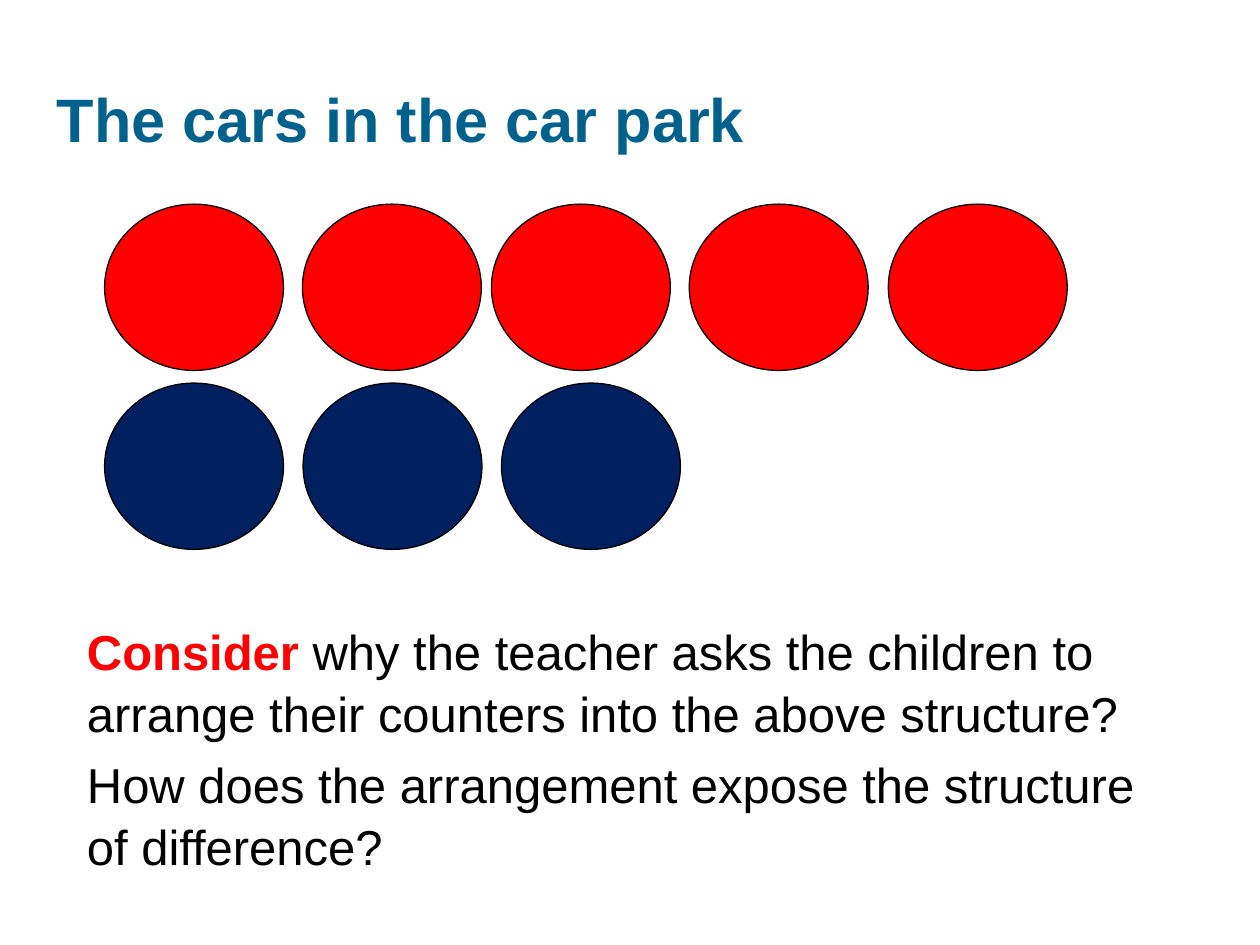
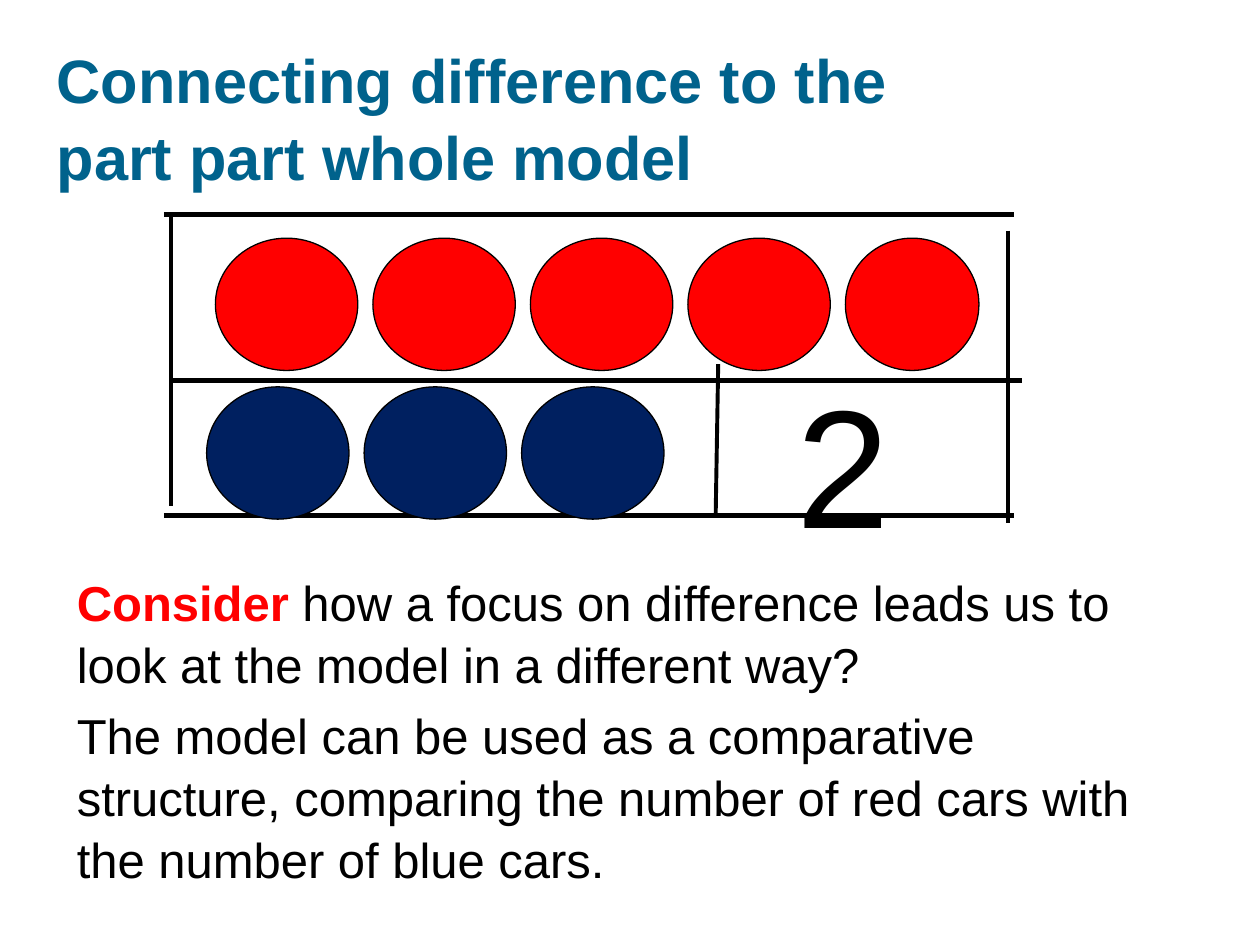
from lxml import etree
from pptx import Presentation
from pptx.dml.color import RGBColor
from pptx.enum.shapes import MSO_CONNECTOR, MSO_SHAPE
from pptx.enum.text import MSO_ANCHOR, MSO_AUTO_SIZE, PP_ALIGN
from pptx.oxml.ns import qn
from pptx.util import Inches, Pt

COLOURS = {name: RGBColor.from_string(value) for name, value in {
    "title": "00628C", "red": "FF0000", "blue": "002060", "black": "000000"}.items()}
FONT = "Arial"
LINE_SPACING = 1.05


def add_text_slide(title, title_top, title_anchor, body_box, question, follow_up):
    """Add a slide with a title and a two-paragraph body opening with "Consider"."""
    slide = presentation.slides.add_slide(presentation.slide_layouts[1])
    heading, body = slide.shapes.title, slide.placeholders[1]
    boxes = (heading, (0.35, title_top, 8.67, 1.25)), (body, body_box)
    for shape, box in boxes:
        shape.left, shape.top, shape.width, shape.height = map(Inches, box)
        shape.text_frame.auto_size = MSO_AUTO_SIZE.NONE
        shape.text_frame.word_wrap = True

    heading.text_frame.text = title
    heading.text_frame.vertical_anchor = title_anchor
    paragraph = heading.text_frame.paragraphs[0]
    paragraph.alignment = PP_ALIGN.LEFT
    paragraph.line_spacing = LINE_SPACING
    paragraph.font.name, paragraph.font.size = FONT, Pt(35)
    paragraph.font.bold = True
    paragraph.font.color.rgb = COLOURS["title"]

    first = body.text_frame.paragraphs[0]
    consider = first.add_run()
    consider.text = "Consider"
    consider.font.bold = True
    consider.font.color.rgb = COLOURS["red"]
    first.add_run().text = question
    second = body.text_frame.add_paragraph()
    second.text = follow_up
    for paragraph, space_before in ((first, 0), (second, 5.6)):
        paragraph.line_spacing = LINE_SPACING
        paragraph.space_before = Pt(space_before)
        properties = paragraph._p.get_or_add_pPr()
        properties.set("marL", "0")
        properties.set("indent", "0")
        etree.SubElement(properties, qn("a:buNone"))
        paragraph.font.name, paragraph.font.size = FONT, Pt(28)
        paragraph.font.color.rgb = COLOURS["black"]
    return slide


def add_counters(slide, colour, lefts, top, widths, height):
    for left, width in zip(lefts, widths):
        counter = slide.shapes.add_shape(
            MSO_SHAPE.OVAL, Inches(left), Inches(top), Inches(width), Inches(height))
        counter.shadow.inherit = False
        counter.fill.solid()
        counter.fill.fore_color.rgb = COLOURS[colour]
        counter.line.color.rgb = COLOURS["black"]
        counter.line.width = Pt(0.75)


presentation = Presentation()
presentation.slide_width, presentation.slide_height = Inches(10), Inches(7.5)

# Counters in two rows
slide = add_text_slide(
    "The cars in the car park", 0.3, MSO_ANCHOR.MIDDLE, (0.59, 4.86, 8.66, 1.57),
    " why the teacher asks the children to arrange their counters into the above structure?",
    "How does the arrangement expose the structure of difference?")
add_counters(slide, "red", [0.83, 2.4, 3.9, 5.47, 7.05], 1.62, [1.42] * 5, 1.32)
add_counters(slide, "blue", [0.83 + 1.575 * column for column in range(3)],
             3.04, [1.42] * 3, 1.32)

# Counters inside the part part whole model
slide = add_text_slide(
    "Connecting difference to the \vpart part whole model", 0.33, MSO_ANCHOR.BOTTOM,
    (0.51, 4.47, 8.83, 2.28),
    " how a focus on difference leads us to look at the model in a different way?",
    "The model can be used as a comparative structure, comparing the number of red cars "
    "with the number of blue cars.")

model_lines = [
    (1.3, 1.7, 8.05, 1.7, 3),
    (1.3, 4.09, 8.05, 4.09, 3),
    (8, 1.83, 8, 4.15, 2.25),
    (1.36, 1.7, 1.36, 4.02, 2.25),
    (5.7, 2.89, 5.68, 4.09, 2.25),
    (1.36, 3.02, 8.11, 3.02, 3),
]
for *ends, weight in model_lines:
    line = slide.shapes.add_connector(MSO_CONNECTOR.STRAIGHT, *map(Inches, ends))
    line.line.color.rgb = COLOURS["black"]
    line.line.width = Pt(weight)
    etree.SubElement(line._element.spPr, qn("a:effectLst"))

add_counters(slide, "red", [1.71 + 1.25 * column for column in range(5)],
             1.89, [1.13] * 4 + [1.06], 1.05)
add_counters(slide, "blue", [1.64 + 1.25 * column for column in range(3)],
             3.07, [1.13] * 3, 1.05)

difference = slide.shapes.add_textbox(Inches(6.22), Inches(2.73), Inches(1.38), Inches(1.37))
difference.text_frame.word_wrap = True
difference.text_frame.text = "2"
paragraph = difference.text_frame.paragraphs[0]
paragraph.line_spacing = LINE_SPACING
paragraph.font.name, paragraph.font.size = FONT, Pt(96)
paragraph.font.color.rgb = COLOURS["black"]

presentation.save("out.pptx")
